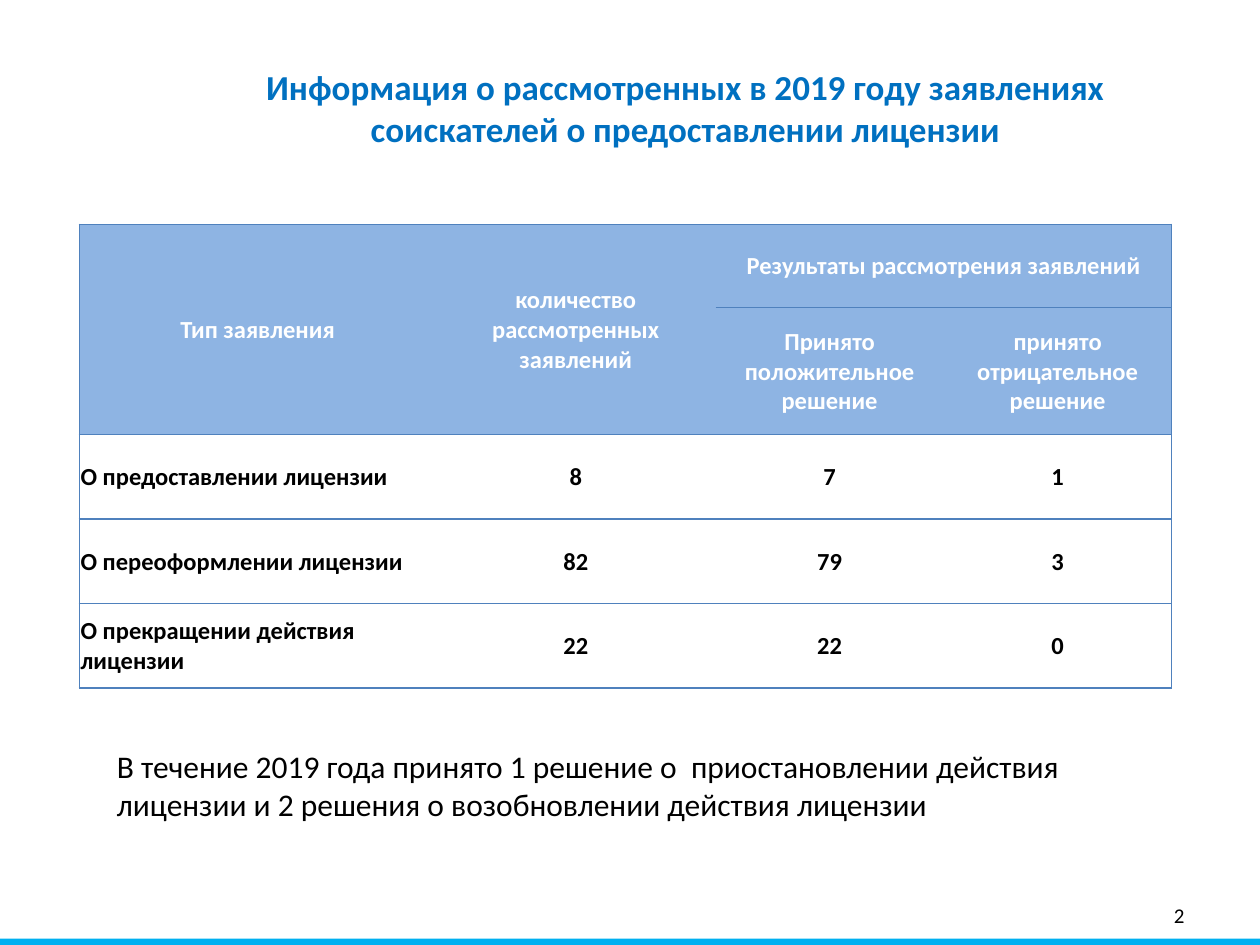
from dataclasses import dataclass

from lxml import etree
from pptx import Presentation
from pptx.dml.color import RGBColor
from pptx.enum.shapes import MSO_SHAPE
from pptx.enum.text import MSO_ANCHOR, PP_ALIGN
from pptx.oxml.ns import qn
from pptx.util import Inches, Pt

LEFT, CENTER, RIGHT = PP_ALIGN.LEFT, PP_ALIGN.CENTER, PP_ALIGN.RIGHT
TOP, MIDDLE = MSO_ANCHOR.TOP, MSO_ANCHOR.MIDDLE
RECTANGLE = MSO_SHAPE.RECTANGLE


@dataclass(frozen=True)
class Theme:
    font: str = "Calibri"
    title: str = "0070C0"
    accent: str = "00B0F0"
    header: str = "8EB4E3"
    border: str = "4F81BD"
    white: str = "FFFFFF"
    black: str = "000000"
    title_size: int = 20
    note_size: int = 18
    table_size: int = 14
    number_size: int = 12


theme = Theme()


def write(frame, text, *, size, color=theme.black, bold=False, align=LEFT, anchor=TOP):
    frame.word_wrap = True
    frame.vertical_anchor = anchor
    para = frame.paragraphs[0]
    para.alignment = align
    span = para.add_run()
    span.text = text
    span.font.name = theme.font
    span.font.size = Pt(size)
    span.font.bold = bold
    span.font.color.rgb = RGBColor.from_string(color)


def set_border(cell, side, visible):
    line = etree.SubElement(cell._tc.get_or_add_tcPr(), qn(f"a:ln{side}"), w=str(Pt(1)))
    if visible:
        fill = etree.SubElement(line, qn("a:solidFill"))
        etree.SubElement(fill, qn("a:srgbClr"), val=theme.border)
    else:
        etree.SubElement(line, qn("a:noFill"))


deck = Presentation()
deck.slide_width, deck.slide_height = Inches(10), Inches(7.5)
page = deck.slides.add_slide(deck.slide_layouts[6])

# Bottom stripe
stripe = page.shapes.add_shape(RECTANGLE, Inches(0), Inches(7.45), Inches(10), Inches(0.05))
stripe.shadow.inherit = False
stripe.fill.solid()
stripe.fill.fore_color.rgb = RGBColor.from_string(theme.accent)
stripe.line.fill.background()

# Page number, title and note
texts = [
    ("2", (7.17, 7.06, 2.33, 0.4),
     dict(size=theme.number_size, align=RIGHT, anchor=MIDDLE)),
    ("Информация о рассмотренных в 2019 году заявлениях соискателей о предоставлении лицензии",
     (1.54, 0.47, 7.8, 0.77),
     dict(size=theme.title_size, color=theme.title, bold=True, align=CENTER)),
    ("В течение 2019 года принято 1 решение о  приостановлении действия лицензии "
     "и 2 решения о возобновлении действия лицензии",
     (0.83, 5.88, 8.47, 0.71), dict(size=theme.note_size)),
]
for text, place, style in texts:
    box = page.shapes.add_textbox(*map(Inches, place))
    write(box.text_frame, text, **style)

# Table grid
column_widths = [2.83, 2.22, 1.81, 1.81]
row_heights = [0.66, 1.01, 0.67, 0.67, 0.67]
rows = [
    ["Тип заявления", "количество рассмотренных заявлений",
     "Результаты рассмотрения заявлений", None],
    [None, None, "Принято положительное решение", "принято отрицательное решение"],
    ["О предоставлении лицензии", "8", "7", "1"],
    ["О переоформлении лицензии", "82", "79", "3"],
    ["О прекращении действия лицензии", "22", "22", "0"],
]
header_rows = 2
table = page.shapes.add_table(
    len(rows), len(column_widths), Inches(0.63), Inches(1.78),
    Inches(sum(column_widths)), Inches(sum(row_heights))).table
table.first_row = table.horz_banding = False
for column, width in zip(table.columns, column_widths):
    column.width = Inches(width)
for row, height in zip(table.rows, row_heights):
    row.height = Inches(height)

# Merged headings
for first, last in [((0, 0), (1, 0)), ((0, 1), (1, 1)), ((0, 2), (0, 3))]:
    table.cell(*first).merge(table.cell(*last))

# Table cells: horizontal rules and an outer frame
for r, values in enumerate(rows):
    for c, text in enumerate(values):
        cell = table.cell(r, c)
        is_header = r < header_rows
        right_edge = c + (cell.span_width if cell.is_merge_origin else 1)
        inside_tall_heading = cell.is_spanned and r == 1
        set_border(cell, "L", c == 0)
        set_border(cell, "R", right_edge == len(column_widths))
        set_border(cell, "T", not inside_tall_heading)
        set_border(cell, "B", True)
        cell.fill.solid()
        cell.fill.fore_color.rgb = RGBColor.from_string(
            theme.header if is_header else theme.white)
        if text is None:
            continue
        cell.margin_left = cell.margin_right = cell.margin_top = Inches(0.01)
        cell.margin_bottom = Inches(0)
        cell.vertical_anchor = MIDDLE
        write(cell.text_frame, text, size=theme.table_size, bold=True, anchor=None,
              color=theme.white if is_header else theme.black,
              align=CENTER if is_header or c > 0 else LEFT)

deck.save("out.pptx")
